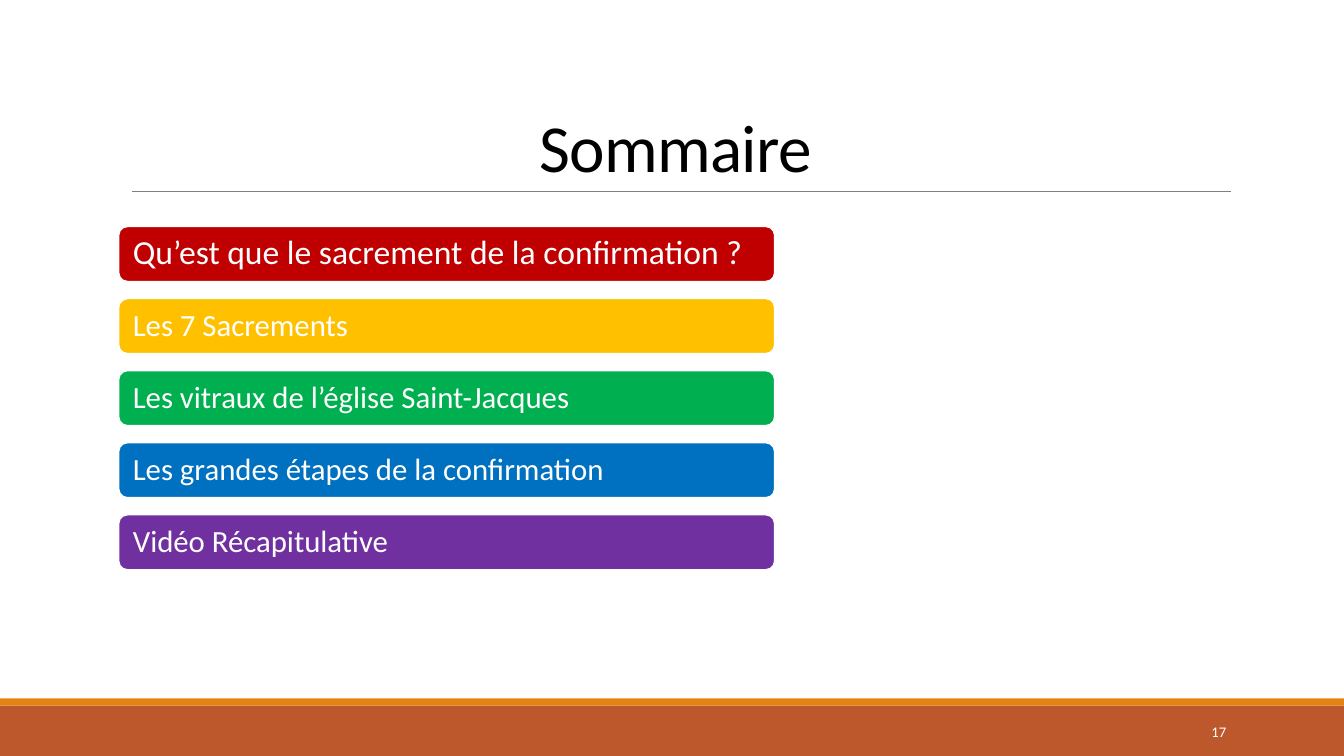
from lxml import etree
from pptx import Presentation
from pptx.dml.color import RGBColor
from pptx.enum.shapes import MSO_CONNECTOR, MSO_SHAPE
from pptx.enum.text import MSO_ANCHOR, PP_ALIGN
from pptx.oxml.ns import qn
from pptx.util import Inches, Pt

RECT, ROUND = MSO_SHAPE.RECTANGLE, MSO_SHAPE.ROUNDED_RECTANGLE
LINE = MSO_CONNECTOR.STRAIGHT
MIDDLE, BOTTOM = MSO_ANCHOR.MIDDLE, MSO_ANCHOR.BOTTOM
LEFT, CENTER, RIGHT = PP_ALIGN.LEFT, PP_ALIGN.CENTER, PP_ALIGN.RIGHT

BLACK = RGBColor(0x00, 0x00, 0x00)
WHITE = RGBColor(0xFF, 0xFF, 0xFF)
GREY = RGBColor(0x80, 0x80, 0x80)
RUST = RGBColor(0xBD, 0x58, 0x2C)
ORANGE = RGBColor(0xE4, 0x83, 0x12)
RED = RGBColor(0xC0, 0x00, 0x00)
YELLOW = RGBColor(0xFF, 0xC0, 0x00)
GREEN = RGBColor(0x00, 0xB0, 0x50)
BLUE = RGBColor(0x00, 0x70, 0xC0)
PURPLE = RGBColor(0x70, 0x30, 0xA0)


def add_bar(kind, left, top, width, height, color):
    bar = slide.shapes.add_shape(
        kind, Inches(left), Inches(top), Inches(width), Inches(height))
    bar.shadow.inherit = False
    bar.fill.solid()
    bar.fill.fore_color.rgb = color
    bar.line.fill.background()
    return bar


def set_text(shape, text, size, color, align, anchor):
    frame = shape.text_frame
    frame.word_wrap = True
    frame.vertical_anchor = anchor
    par = frame.paragraphs[0]
    par.text = text
    par.alignment = align
    par.font.name = "Calibri"
    par.font.size = Pt(size)
    par.font.color.rgb = color
    return par


prs = Presentation()
prs.slide_width, prs.slide_height = Inches(13.33), Inches(7.5)
slide = prs.slides.add_slide(prs.slide_layouts[6])

# Footer bands
add_bar(RECT, 0, 7, 13.33, 0.5, RUST)
add_bar(RECT, 0, 6.93, 13.33, 0.07, ORANGE)

# Rule under the title
rule = slide.shapes.add_connector(
    LINE, Inches(1.31), Inches(1.9), Inches(12.21), Inches(1.9))
rule.line.color.rgb = GREY
rule.line.width = Pt(0.5)
etree.SubElement(rule._element.spPr, qn("a:effectLst"))

# Title, with slightly tightened letters
title = slide.shapes.add_textbox(
    Inches(1.2), Inches(0.31), Inches(11), Inches(1.59))
par = set_text(title, "Sommaire", 48, BLACK, CENTER, BOTTOM)
par.line_spacing = 0.85
par.runs[0]._r.get_or_add_rPr().set("spc", "-50")

# Agenda bars
topics = [
    ("Qu’est que le sacrement de la confirmation ?", 24, RED),
    ("Les 7 Sacrements", 22, YELLOW),
    ("Les vitraux de l’église Saint-Jacques", 22, GREEN),
    ("Les grandes étapes de la confirmation", 22, BLUE),
    ("Vidéo Récapitulative", 22, PURPLE),
]
for row, (text, size, color) in enumerate(topics):
    bar = add_bar(ROUND, 1.17, 2.24 + row * 0.715, 6.52, 0.56, color)
    bar.line.color.rgb = WHITE
    bar.line.width = Pt(2)
    par = set_text(bar, text, size, WHITE, LEFT, MIDDLE)
    par.line_spacing = 0.9
    frame = bar.text_frame
    frame.margin_left = Inches(0.12)
    frame.margin_right = frame.margin_top = frame.margin_bottom = Inches(0.05)

# Slide number
number = slide.shapes.add_textbox(
    Inches(10.83), Inches(7.06), Inches(1.43), Inches(0.4))
set_text(number, "17", 10.5, WHITE, RIGHT, MIDDLE)

prs.save("out.pptx")
